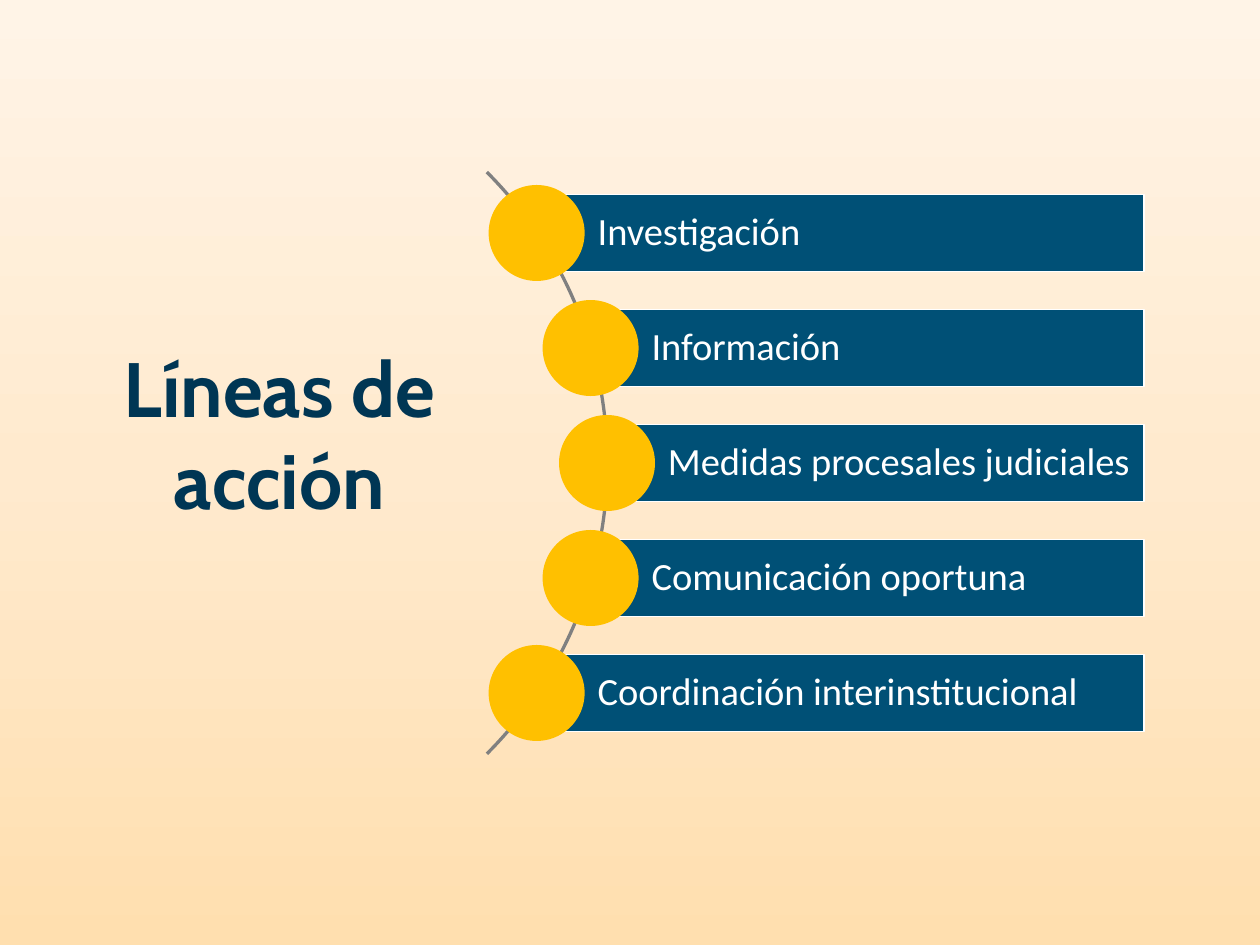
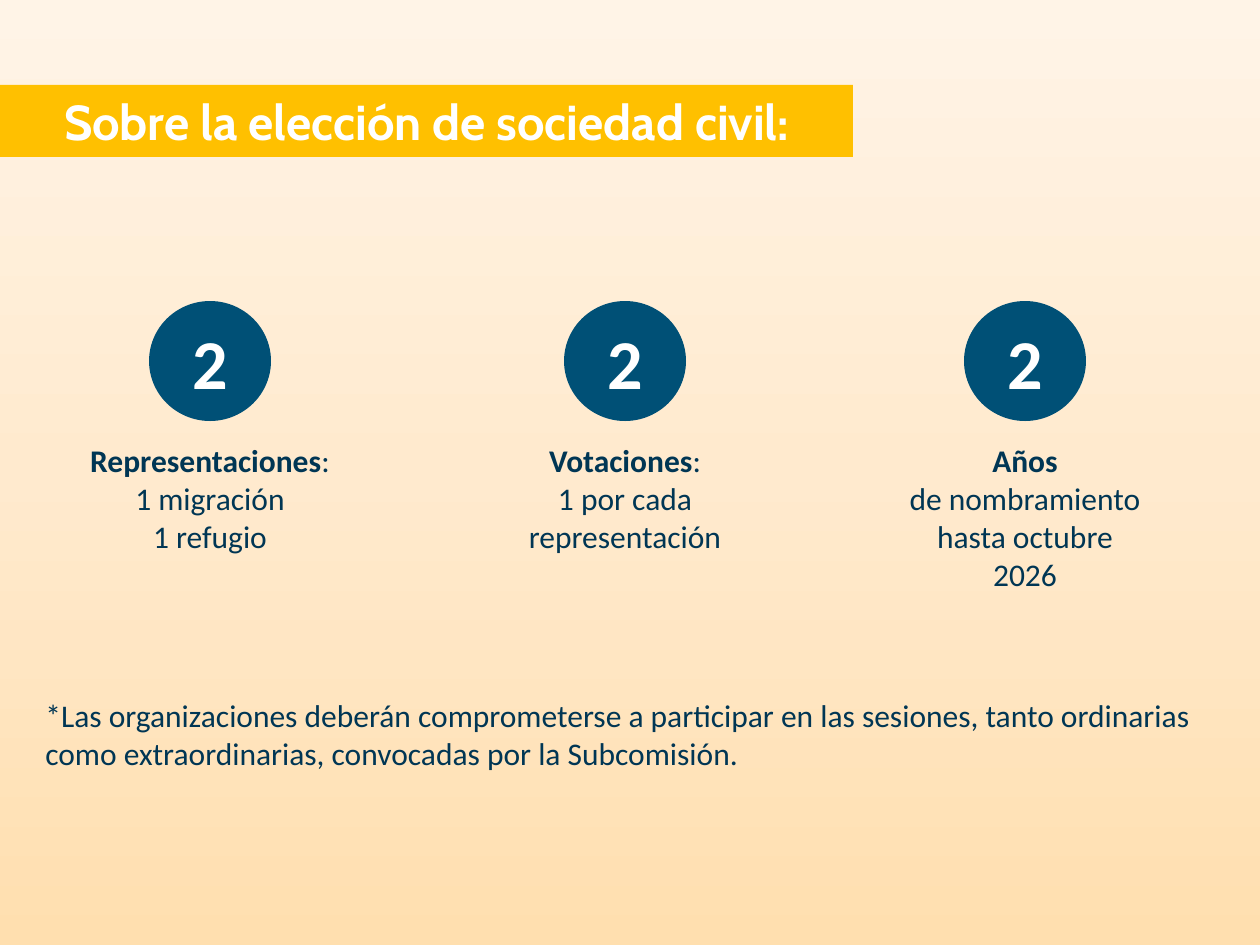
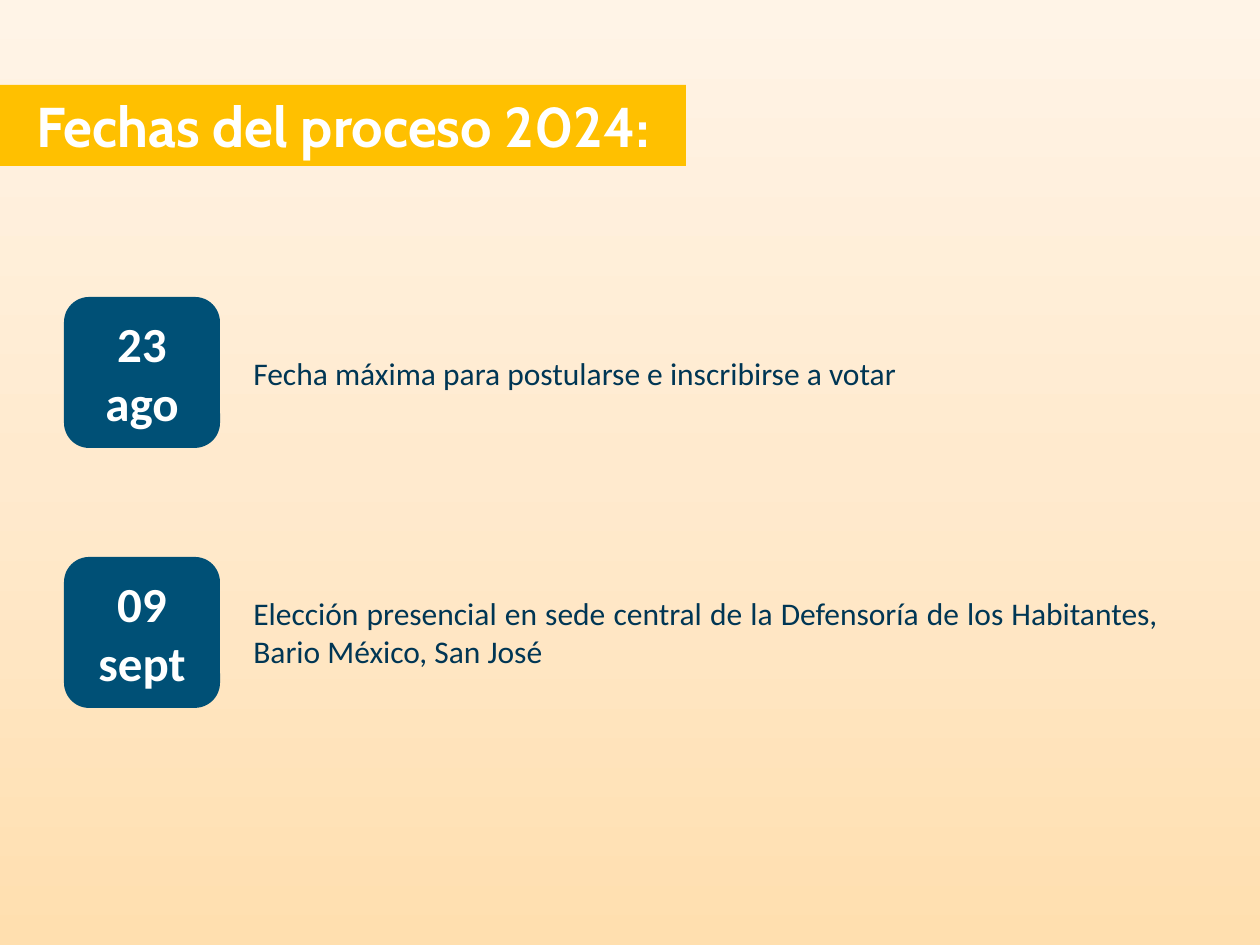
from copy import deepcopy
from math import sqrt

from pptx import Presentation
from pptx.dml.color import RGBColor
from pptx.enum.shapes import MSO_SHAPE
from pptx.enum.text import MSO_ANCHOR, MSO_AUTO_SIZE, PP_ALIGN
from pptx.oxml.ns import qn
from pptx.util import Emu, Pt

SLIDE_W, SLIDE_H = 1260, 945
PX_PER_INCH = 126

WHITE = RGBColor(0xFF, 0xFF, 0xFF)
NAVY = RGBColor(0x00, 0x36, 0x54)
BLUE = RGBColor(0x00, 0x50, 0x76)
GOLD = RGBColor(0xFF, 0xC0, 0x00)
GREY = RGBColor(0x80, 0x80, 0x80)
SAND = RGBColor(0xFF, 0xDF, 0xAF)
CREAM = RGBColor(0xFF, 0xEA, 0xCE)
IVORY = RGBColor(0xFF, 0xF4, 0xE7)

TITLE_FONT, BODY_FONT = "Cabin", "Calibri"


def px(n):
    """Turn pixels into EMU."""
    return Emu(round(n * 914400 / PX_PER_INCH))


def add_box(shapes, kind, x, y, w, h, fill):
    """Add a preset shape with a plain fill and neither line nor shadow."""
    sp = shapes.add_shape(kind, px(x), px(y), px(w), px(h))
    sp.shadow.inherit = False
    sp.fill.solid()
    sp.fill.fore_color.rgb = fill
    sp.line.fill.background()
    return sp


def write(sp, paragraphs, size, color=WHITE, font=BODY_FONT, align=PP_ALIGN.CENTER,
          anchor=MSO_ANCHOR.MIDDLE, grow=False):
    """Fill a shape with paragraphs, each a list of (text, bold) runs."""
    tf = sp.text_frame
    tf.word_wrap = True
    tf.vertical_anchor = anchor
    if grow:
        tf.auto_size = MSO_AUTO_SIZE.SHAPE_TO_FIT_TEXT
    for i, runs in enumerate(paragraphs):
        p = tf.add_paragraph() if i else tf.paragraphs[0]
        p.alignment = align
        for text, bold in runs:
            r = p.add_run()
            r.text = text
            r.font.name = font
            r.font.size = Pt(size)
            r.font.bold = bold
            r.font.color.rgb = color
    return tf


def add_text(shapes, x, y, w, h, paragraphs, size=18, font=BODY_FONT, align=PP_ALIGN.CENTER):
    """Add a navy text box that grows downwards with its text."""
    sp = shapes.add_textbox(px(x), px(y), px(w), px(h))
    write(sp, paragraphs, size, NAVY, font, align, MSO_ANCHOR.TOP, grow=True)


def add_slide(prs):
    """Add a blank slide covered by the warm gradient."""
    s = prs.slides.add_slide(prs.slide_layouts[6])
    sp = add_box(s.shapes, MSO_SHAPE.RECTANGLE, 0, 0, SLIDE_W, SLIDE_H, SAND)
    sp.fill.gradient()
    sp.fill.gradient_angle = 90
    stops = sp._element.spPr.find(qn("a:gradFill")).find(qn("a:gsLst"))
    stops.insert(1, deepcopy(stops[0]))
    for stop, position, color in zip(sp.fill.gradient_stops, (0, 0.5, 1), (SAND, CREAM, IVORY)):
        stop.position = position
        stop.color.rgb = color
    return s


def add_title_band(s, text, w, h, size):
    """Add the gold title band that starts at the left edge."""
    sp = add_box(s.shapes, MSO_SHAPE.RECTANGLE, 0, 85, w, h, GOLD)
    write(sp, [[(text, True)]], size, font=TITLE_FONT, anchor=MSO_ANCHOR.TOP, grow=True)


def add_arc_list(shapes, x, y, size, right, items):
    """Set bars with round markers along the right side of an arc."""
    bar_h, dot, pitch = 77, 96, 115
    cx, cy, radius = x + size / 2, y + size / 2, size / 2 - 2
    arc = add_box(shapes, MSO_SHAPE.BLOCK_ARC, x, y, size, size, GREY)
    for i, value in enumerate((189, 27, 0.004)):
        arc.adjustments[i] = value
    for i, item in enumerate(items):
        dy = (i - (len(items) - 1) / 2) * pitch
        dot_x, dot_y = cx + sqrt(radius ** 2 - dy ** 2), cy + dy
        bar = add_box(shapes, MSO_SHAPE.RECTANGLE, dot_x, dot_y - bar_h / 2,
                      right - dot_x, bar_h, BLUE)
        bar.line.color.rgb = WHITE
        bar.line.width = Pt(1)
        tf = write(bar, [[(item, False)]], 22, align=PP_ALIGN.LEFT)
        tf.margin_left = px(61)
        tf.margin_right = tf.margin_top = tf.margin_bottom = px(7)
        tf.paragraphs[0].line_spacing = 0.9
        add_box(shapes, MSO_SHAPE.OVAL, dot_x - dot / 2, dot_y - dot / 2, dot, dot, GOLD)


def add_figure(shapes, x, y, w, h, number, paragraphs):
    """Add a number in a circle, centred over its explanation."""
    circle_w, circle_h, text_top = 122, 120, 134
    circle = add_box(shapes, MSO_SHAPE.OVAL, x + (w - circle_w) / 2, y, circle_w, circle_h, BLUE)
    write(circle, [[(number, True)]], 40)
    add_text(shapes, x, y + text_top, w, h - text_top, paragraphs)


def add_date(shapes, x, y, w, date, text, text_h):
    """Add a date tile with its event beside it."""
    tile_w, tile_h, text_left = 156, 151, 177
    add_text(shapes, x + text_left, y + (tile_h - text_h) / 2, w - text_left, text_h,
             [[(text, False)]], align=PP_ALIGN.JUSTIFY)
    tile = add_box(shapes, MSO_SHAPE.ROUNDED_RECTANGLE, x, y, tile_w, tile_h, BLUE)
    write(tile, [[(date, True)]], 28)


def build_lines_of_action(prs):
    """Build the slide with the lines of action."""
    s = add_slide(prs)
    add_arc_list(s.shapes.add_group_shape().shapes, -217, 50, 826, 1144, [
        "Investigación",
        "Información",
        "Medidas procesales judiciales",
        "Comunicación oportuna",
        "Coordinación interinstitucional",
    ])
    add_text(s.shapes, 10, 334, 539, 199, [[("Líneas de acción", True)]], 44, TITLE_FONT)


def build_election(prs):
    """Build the slide about the election."""
    s = add_slide(prs)
    add_title_band(s, "Sobre la elección de sociedad civil:", 853, 72, 28)
    figures = [
        (75, 299, [[("Representaciones", True), (":", False)],
                   [("1 migración", False)], [("1 refugio", False)]]),
        (490, 299, [[("Votaciones", True), (":", False)],
                    [("1 por cada representación", False)]]),
        (890, 338, [[("Años", True)], [("de nombramiento hasta octubre 2026", False)]]),
    ]
    for x, h, paragraphs in figures:
        add_figure(s.shapes.add_group_shape().shapes, x, 301, 270, h, "2", paragraphs)
    note = ("*Las organizaciones deberán comprometerse a participar en las sesiones, tanto "
            "ordinarias como extraordinarias, convocadas por la Subcomisión.")
    add_text(s.shapes, 33, 690, 1194, 127, [[(note, False)]], align=PP_ALIGN.LEFT)


def build_dates(prs):
    """Build the slide with the dates of the process."""
    s = add_slide(prs)
    add_title_band(s, "Fechas del proceso 2024:", 686, 81, 32)
    dates = [
        (297, "23 ago", "Fecha máxima para postularse e inscribirse a votar", 50),
        (557, "09 sept", "Elección presencial en sede central de la Defensoría de los "
                         "Habitantes, Bario México, San José", 89),
    ]
    for y, date, text, text_h in dates:
        add_date(s.shapes.add_group_shape().shapes, 64, y, 1107, date, text, text_h)


def main():
    """Build the three slides and save them."""
    prs = Presentation()
    prs.slide_width, prs.slide_height = px(SLIDE_W), px(SLIDE_H)
    build_lines_of_action(prs)
    build_election(prs)
    build_dates(prs)
    prs.save("out.pptx")


if __name__ == "__main__":
    main()
